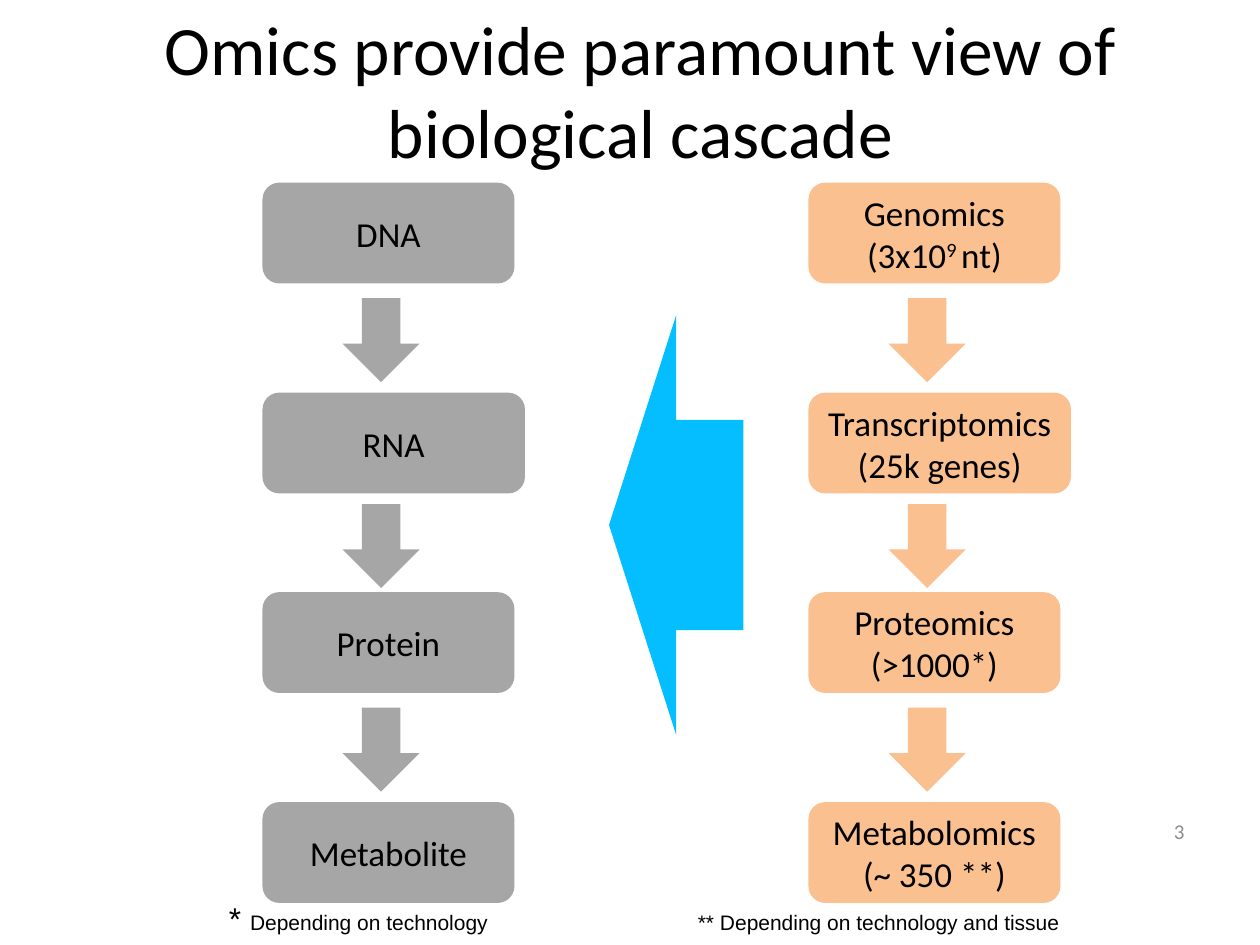
from pptx import Presentation
from pptx import util as u
from pptx.dml.color import RGBColor
from pptx.enum import shapes, text

Pt = u.Pt
COLOURS = {
    "molecule": "A6A6A6",
    "omics": "FAC090",
    "view": "05BEFF",
    "ink": "000000",
    "number": "8C8C8C",
}
LABEL = {"name": "Calibri", "size": Pt(20)}
NOTE = {"name": "Arial", "size": Pt(12)}
NOTE_MARK = {"name": "Arial", "size": Pt(18)}

# Each row of the cascade: top, box width, molecule, omics lines
BOX_HEIGHT = 57.6
LEVELS = [
    (104.4, 144, "DNA", ["Genomics", "(3x10^9 ^nt)"]),
    (224.4, 150, "RNA", ["Transcriptomics", "(25k genes)"]),
    (338.4, 144, "Protein", ["Proteomics", "(>1000*)"]),
    (458.4, 144, "Metabolite", ["Metabolomics", "(~ 350 **)"]),
]
ARROW_TOPS = [170.4, 288, 404.4]
ARROW_OFFSET, ARROW_WIDTH, ARROW_HEIGHT = 45.8, 44, 48


def rgb(colour):
    return RGBColor.from_string(COLOURS[colour])


def add_run(paragraph, words, style, colour="ink"):
    run = paragraph.add_run()
    run.text = words
    for attribute, value in style.items():
        setattr(run.font, attribute, value)
    run.font.color.rgb = rgb(colour)
    return run


def add_block(slide, kind, area, colour):
    block = slide.shapes.add_shape(kind, *map(Pt, area))
    block.shadow.inherit = False
    block.fill.solid()
    block.fill.fore_color.rgb = rgb(colour)
    block.line.fill.background()
    return block


def add_level(slide, area, colour, lines):
    """Rounded box; words between two carets are superscript."""
    frame = add_block(slide, shapes.MSO_SHAPE.ROUNDED_RECTANGLE, area, colour).text_frame
    frame.word_wrap = True
    frame.vertical_anchor = text.MSO_ANCHOR.MIDDLE
    for row, line in enumerate(lines):
        paragraph = frame.add_paragraph() if row else frame.paragraphs[0]
        paragraph.alignment = text.PP_ALIGN.CENTER
        for part, words in enumerate(line.split("^")):
            run = add_run(paragraph, words, LABEL)
            if part % 2:
                run._r.get_or_add_rPr().set("baseline", "30000")


def add_cascade(slide, left, colour, labels):
    for (top, width, *_), lines in zip(LEVELS, labels):
        add_level(slide, (left, top, width, BOX_HEIGHT), colour, lines)
    for top in ARROW_TOPS:
        area = (left + ARROW_OFFSET, top, ARROW_WIDTH, ARROW_HEIGHT)
        add_block(slide, shapes.MSO_SHAPE.DOWN_ARROW, area, colour)


def add_title(slide, words):
    title = slide.shapes.title
    place = {"left": 42, "top": 6, "width": 648, "height": 90}
    for side, length in place.items():
        setattr(title, side, Pt(length))
    frame = title.text_frame
    frame.auto_size = text.MSO_AUTO_SIZE.NONE
    frame.vertical_anchor = text.MSO_ANCHOR.MIDDLE
    frame.paragraphs[0].alignment = text.PP_ALIGN.CENTER
    add_run(frame.paragraphs[0], words, {"name": "Calibri", "size": Pt(39.6)})


def add_footnote(slide, area, runs):
    frame = slide.shapes.add_textbox(*map(Pt, area)).text_frame
    frame.word_wrap = False
    frame.auto_size = text.MSO_AUTO_SIZE.SHAPE_TO_FIT_TEXT
    for words, style in runs:
        add_run(frame.paragraphs[0], words, style)


def add_page_number(slide, number):
    frame = slide.shapes.add_textbox(Pt(516), Pt(460.8), Pt(168), Pt(28.8)).text_frame
    frame.word_wrap = True
    frame.vertical_anchor = text.MSO_ANCHOR.MIDDLE
    frame.paragraphs[0].alignment = text.PP_ALIGN.RIGHT
    add_run(frame.paragraphs[0], number, {"name": "Calibri", "size": Pt(12)}, "number")


def main():
    deck = Presentation()
    deck.slide_width, deck.slide_height = Pt(720), Pt(540)
    slide = deck.slides.add_slide(deck.slide_layouts.get_by_name("Title Only"))

    # Heading and page number
    add_page_number(slide, "3")
    add_title(slide, "Omics provide paramount view of biological cascade")

    # Molecules on the left, the matching omics on the right
    add_cascade(slide, 150, "molecule", [[level[2]] for level in LEVELS])
    add_cascade(slide, 462, "omics", [level[3] for level in LEVELS])

    # Omics look back at the whole cascade
    add_block(slide, shapes.MSO_SHAPE.LEFT_ARROW, (348, 180, 76.8, 240), "view")

    # Footnotes
    add_footnote(slide, (123.8, 510, 163.4, 28.8),
                 [("* ", NOTE_MARK), ("Depending on technology", NOTE)])
    add_footnote(slide, (391.7, 516, 222.5, 21.6),
                 [("** Depending on technology and tissue", NOTE)])

    deck.save("out.pptx")


if __name__ == "__main__":
    main()
